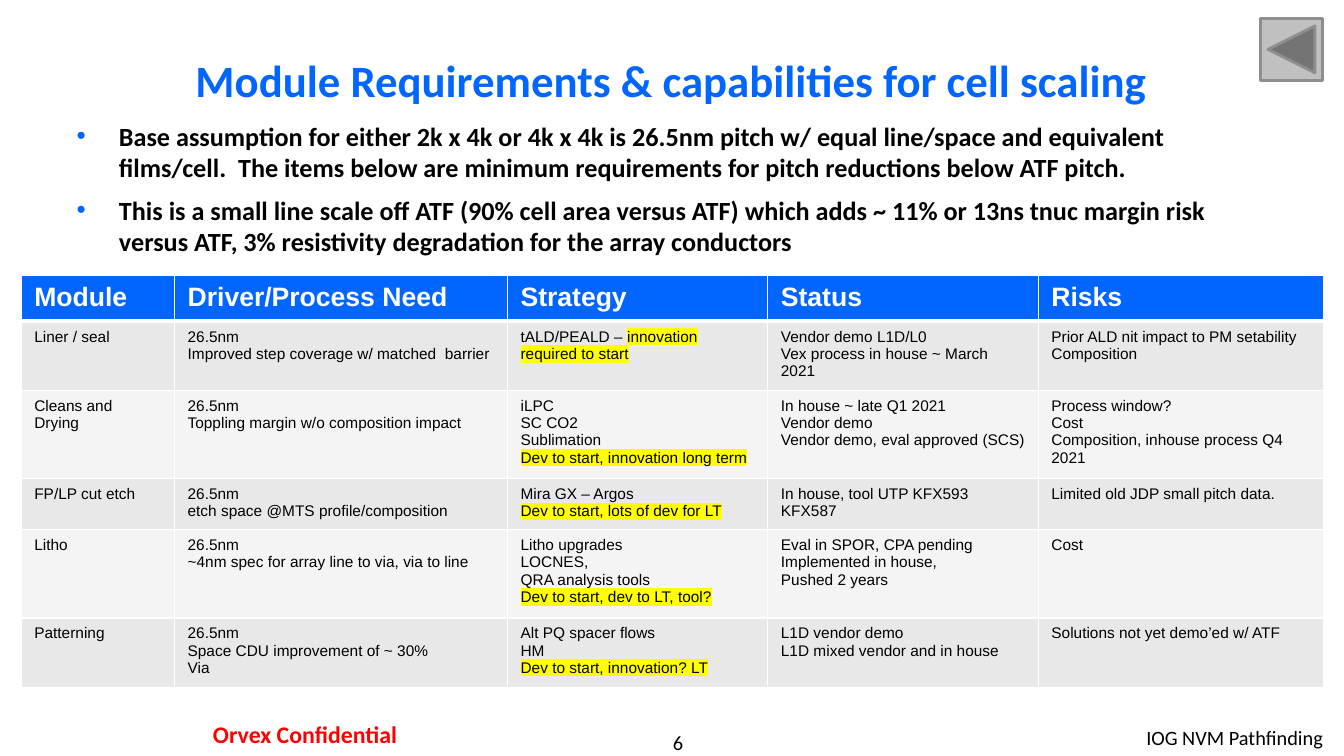
import pptx
import pptx.util
import pptx.dml.color
import pptx.enum.shapes
import pptx.enum.text
import pptx.oxml
import pptx.oxml.ns

COLORS = {
    "blue": "0066FF", "black": "000000", "white": "FFFFFF", "red": "FF0000",
    "odd": "E8E8E8", "even": "F4F4F4", "mark": "FFFF00",
    "button": "C0C0C0", "edge": "8E8E8E",
}
NS = pptx.oxml.ns.nsdecls("a")
ALIGN = pptx.enum.text.PP_ALIGN
ANCHOR = pptx.enum.text.MSO_ANCHOR

TITLE = "Module Requirements & capabilities for cell scaling"
ASSUMPTIONS = [
    "Base assumption for either 2k x 4k or 4k x 4k is 26.5nm pitch w/ equal line/space and equivalent "
    "films/cell.  The items below are minimum requirements for pitch reductions below ATF pitch.",
    "This is a small line scale off ATF (90% cell area versus ATF) which adds ~ 11% or 13ns tnuc margin risk "
    "versus ATF, 3% resistivity degradation for the array conductors",
]
# MODULES
MODULES = [
    ["Module", "Driver/Process Need", "Strategy", "Status", "Risks"],
    ["Liner / seal", "26.5nm\nImproved step coverage w/ matched  barrier",
     "tALD/PEALD – |innovation required to start",
     "Vendor demo L1D/L0\nVex process in house ~ March 2021",
     "Prior ALD nit impact to PM setability\nComposition"],
    ["Cleans and Drying", "26.5nm\nToppling margin w/o composition impact",
     "iLPC\nSC CO2\nSublimation\n|Dev to start, innovation long term",
     "In house ~ late Q1 2021\nVendor demo\nVendor demo, eval approved (SCS)",
     "Process window?\nCost\nComposition, inhouse process Q4 2021"],
    ["FP/LP cut etch", "26.5nm\netch space @MTS profile/composition",
     "Mira GX – Argos\n|Dev to start, lots of dev for LT",
     "In house, tool UTP KFX593\nKFX587", "Limited old JDP small pitch data."],
    ["Litho", "26.5nm\n~4nm spec for array line to via, via to line",
     "Litho upgrades\nLOCNES,\nQRA analysis tools\n|Dev to start, dev to LT, tool?",
     "Eval in SPOR, CPA pending\nImplemented in house,\nPushed 2 years", "Cost"],
    ["Patterning", "26.5nm\nSpace CDU improvement of ~ 30%\nVia",
     "Alt PQ spacer flows\nHM\n|Dev to start, innovation? LT",
     "L1D vendor demo\nL1D mixed vendor and in house", "Solutions not yet demo’ed w/ ATF"],
]
COLUMN_SHARES = [0.1178, 0.2558, 0.2, 0.2078, 0.2194]
ROW_SHARES = [0.1114, 0.1696, 0.2127, 0.124, 0.2127, 0.1696]

prs = pptx.Presentation()
prs.slide_width = pptx.util.Inches(13.33)
prs.slide_height = pptx.util.Inches(7.5)


def rgb(name):
    return pptx.dml.color.RGBColor.from_string(COLORS[name])


def share(left, top, width, height):
    w, h = prs.slide_width / 100, prs.slide_height / 100
    return int(left * w), int(top * h), int(width * w), int(height * h)


def place(sp, box):
    sp.left, sp.top, sp.width, sp.height = box


def add_bullet(p, color):
    pPr = p._p.get_or_add_pPr()
    indent = pptx.util.Inches(0.42)
    pPr.set("marL", str(indent))
    pPr.set("indent", str(-indent))
    for xml in (f'<a:buClr {NS}><a:srgbClr val="{COLORS[color]}"/></a:buClr>',
                f'<a:buFont {NS} typeface="Arial"/>', f'<a:buChar {NS} char="•"/>'):
        pPr.append(pptx.oxml.parse_xml(xml))


def write(tf, text, size, font="Calibri", color="black", bold=False, align=ALIGN.LEFT,
          anchor=ANCHOR.TOP, margins=(0.1, 0.05), gap=0, bullet=None):
    tf.word_wrap = True
    tf.vertical_anchor = anchor
    tf.margin_left = tf.margin_right = pptx.util.Inches(margins[0])
    tf.margin_top = tf.margin_bottom = pptx.util.Inches(margins[1])
    for i, line in enumerate(text.split("\n")):
        p = tf.add_paragraph() if i else tf.paragraphs[0]
        p.alignment = align
        p.space_before = pptx.util.Pt(gap if i else 0)
        if bullet:
            add_bullet(p, bullet)
        for j, part in enumerate(line.split("|")):
            if not part:
                continue
            r = p.add_run()
            r.text = part
            r.font.size = pptx.util.Pt(size)
            r.font.bold = bold
            r.font.color.rgb = rgb(color)
            if j:
                r.font._element.append(pptx.oxml.parse_xml(
                    f'<a:highlight {NS}><a:srgbClr val="{COLORS["mark"]}"/></a:highlight>'))
            r.font.name = font


def add_heading(s, box):
    sp = s.shapes.title
    place(sp, box)
    write(sp.text_frame, TITLE, 32, color="blue", bold=True, align=ALIGN.CENTER, anchor=ANCHOR.MIDDLE)
    sp.text_frame.auto_size = pptx.enum.text.MSO_AUTO_SIZE.NONE


def add_assumptions(s, box):
    sp = s.placeholders[1]
    place(sp, box)
    write(sp.text_frame, "\n".join(ASSUMPTIONS), 18.7, bold=True, gap=8, bullet="blue")
    sp.text_frame.auto_size = pptx.enum.text.MSO_AUTO_SIZE.NONE


def add_borders(cell, bottom):
    tcPr = cell._tc.get_or_add_tcPr()
    for side, width in (("L", 1), ("R", 1), ("T", 1), ("B", bottom)):
        tcPr.append(pptx.oxml.parse_xml(
            f'<a:ln{side} {NS} w="{pptx.util.Pt(width)}"><a:solidFill>'
            f'<a:srgbClr val="{COLORS["white"]}"/></a:solidFill></a:ln{side}>'))


def add_modules(s, box):
    table = s.shapes.add_table(len(MODULES), len(MODULES[0]), *box).table
    for column, part in zip(table.columns, COLUMN_SHARES):
        column.width = int(box[2] * part)
    for i, (row, part) in enumerate(zip(table.rows, ROW_SHARES)):
        row.height = int(box[3] * part)
        header = i == 0
        fill = "blue" if header else "odd" if i % 2 else "even"
        for cell, text in zip(row.cells, MODULES[i]):
            write(cell.text_frame, text, 19 if header else 11, font="Arial",
                  color="white" if header else "black", bold=header)
            cell.margin_left = cell.margin_right = pptx.util.Inches(0.13)
            cell.margin_top = cell.margin_bottom = pptx.util.Inches(0.07)
            add_borders(cell, 3 if header else 1)
            cell.fill.solid()
            cell.fill.fore_color.rgb = rgb(fill)


def add_back_button(s, box):
    sp = s.shapes.add_shape(pptx.enum.shapes.MSO_SHAPE.ACTION_BUTTON_BACK_OR_PREVIOUS, *box)
    sp.shadow.inherit = False
    sp.fill.solid()
    sp.fill.fore_color.rgb = rgb("button")
    sp.line.color.rgb = rgb("edge")
    sp.line.width = pptx.util.Pt(2)


def add_footer(s, box, text, size, **fmt):
    write(s.shapes.add_textbox(*box).text_frame, text, size, **fmt)


def build_module_slide():
    s = prs.slides.add_slide(prs.slide_layouts[1])
    add_footer(s, share(41.71, 96.53, 17.48, 3.2), "6", 14.5, align=ALIGN.CENTER, margins=(0, 0))
    add_footer(s, share(66.24, 95.33, 32.93, 4.67), "IOG NVM Pathfinding", 14.5,
               align=ALIGN.RIGHT, margins=(0.1, 0.05))
    add_footer(s, share(11.63, 94.4, 22.13, 5.47), "Orvex Confidential", 17, color="red",
               bold=True, align=ALIGN.CENTER, margins=(0.12, 0.06))
    add_heading(s, share(4.95, 6, 90.02, 9.07))
    add_assumptions(s, share(4.95, 15.2, 90.02, 21.2))
    add_modules(s, share(1.58, 36.4, 96.85, 52.67))
    add_back_button(s, share(93.77, 2.4, 4.65, 8.27))


def main():
    build_module_slide()
    prs.save("out.pptx")


if __name__ == "__main__":
    main()
